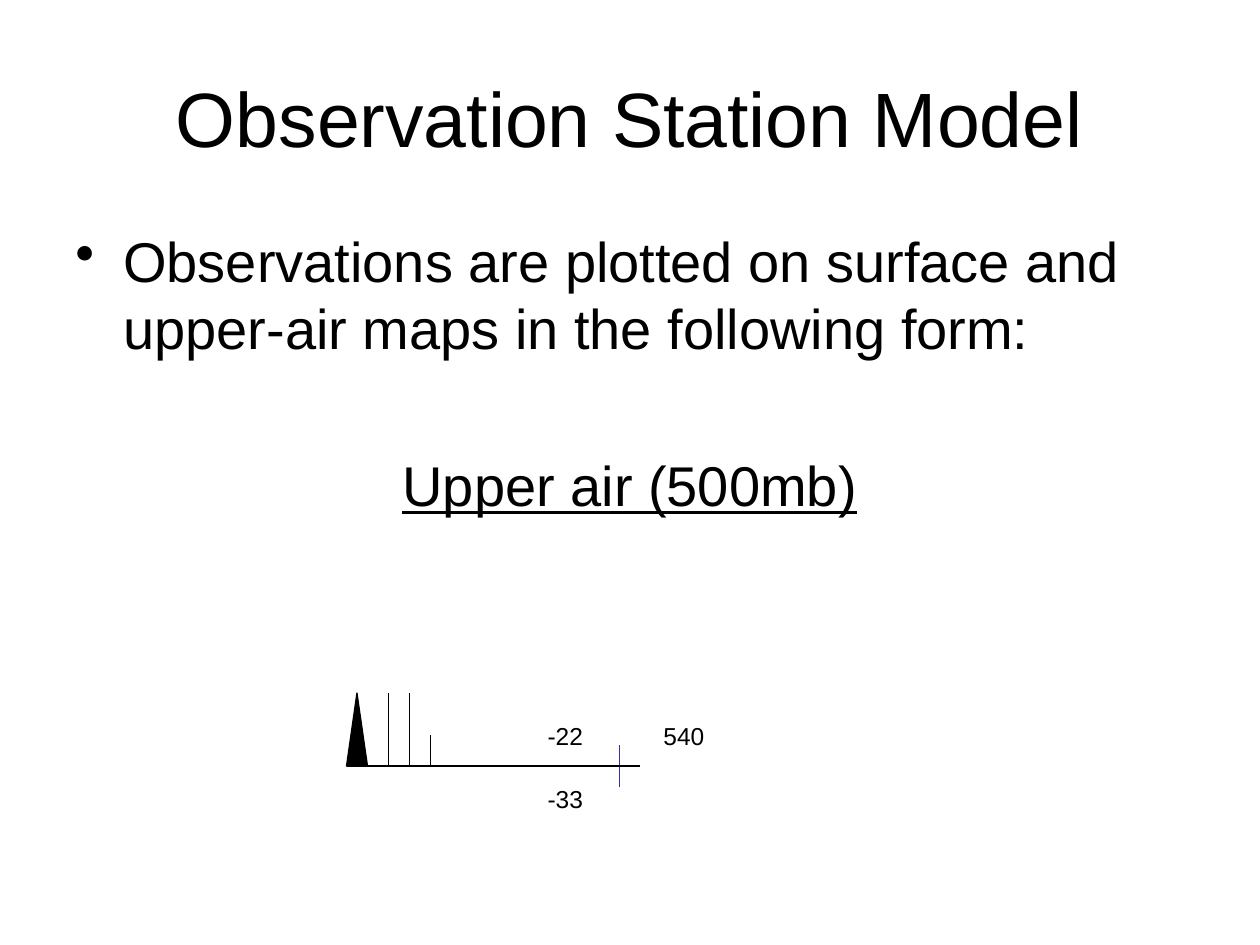
import pptx
import pptx.dml.color
import pptx.enum.shapes
import pptx.enum.text
import pptx.oxml
import pptx.util
from pptx.util import Inches

ALIGN = pptx.enum.text.PP_ALIGN
ANCHOR = pptx.enum.text.MSO_ANCHOR
SHAPES = pptx.enum.shapes
BLACK = "000000"
INDIGO = "333399"


def colour(value):
    """Turn a hex string into a colour."""
    return pptx.dml.color.RGBColor.from_string(value)


def write(para, text, size, paragraph_format=None, **font_format):
    """Write one span in a paragraph and apply the given formats."""
    span = para.add_run()
    span.text = text
    span.font.color.rgb = colour(BLACK)
    font_format = {"name": "Arial", "size": pptx.util.Pt(size), **font_format}
    for target, formats in ((span.font, font_format), (para, paragraph_format or {})):
        for name, value in formats.items():
            setattr(target, name, value)


def add_text_box(page, left, top, width, height):
    """Add a wrapping text box and return its text frame."""
    box = page.shapes.add_textbox(Inches(left), Inches(top), Inches(width), Inches(height))
    box.text_frame.word_wrap = True
    return box.text_frame


def add_line(page, start, end, line_colour=BLACK):
    """Draw a thin straight line without a shadow."""
    ends = [Inches(value) for value in (*start, *end)]
    line = page.shapes.add_connector(SHAPES.MSO_CONNECTOR.STRAIGHT, *ends)
    line.line.color.rgb = colour(line_colour)
    line.line.width = pptx.util.Pt(0.75)
    properties = line._element.spPr
    properties.append(pptx.oxml.parse_xml(
        '<a:effectLst xmlns:a="http://schemas.openxmlformats.org/drawingml/2006/main"/>'))


def add_title(page, left, top, width, height):
    """Place and fill the title placeholder."""
    title = page.shapes.title
    place = {"left": left, "top": top, "width": width, "height": height}
    for name, value in place.items():
        setattr(title, name, Inches(value))
    title.text_frame.vertical_anchor = ANCHOR.MIDDLE
    write(title.text_frame.paragraphs[0], "Observation Station Model", 44,
          {"alignment": ALIGN.CENTER})


def add_body(page, left, top, width, height):
    """Add the bulleted sentence and the underlined heading."""
    frame = add_text_box(page, left, top, width, height)
    bullet = frame.paragraphs[0]
    write(bullet, "Observations are plotted on surface and upper-air maps in the following form:",
          32, {"space_before": pptx.util.Pt(6.4)})
    properties = bullet._p.get_or_add_pPr()
    properties.set("marL", str(Inches(0.38)))
    properties.set("indent", str(-Inches(0.38)))
    properties.append(pptx.oxml.parse_xml(
        '<a:buChar xmlns:a="http://schemas.openxmlformats.org/drawingml/2006/main" char="•"/>'))
    write(frame.add_paragraph(), "Upper air (500mb)", 32,
          {"alignment": ALIGN.CENTER, "space_before": pptx.util.Pt(51)}, underline=True)


def add_station_model(page, left, top, width, height):
    """Draw the wind barb, the station cross and its readings."""
    base = top + height
    step = 1 / 6
    station = left + 13 * step
    add_line(page, (station - step, base), (left, base))
    for column, length in ((2, height), (3, height), (4, 0.25)):
        barb = left + column * step
        add_line(page, (barb, base), (barb, base - length))

    pennant = page.shapes.add_shape(
        SHAPES.MSO_SHAPE.ISOSCELES_TRIANGLE,
        Inches(left), Inches(top), Inches(step), Inches(height))
    pennant.shadow.inherit = False
    pennant.fill.solid()
    pennant.fill.fore_color.rgb = colour(BLACK)
    pennant.line.color.rgb = colour(BLACK)
    pennant.line.width = pptx.util.Pt(0.75)

    add_line(page, (station, base - step), (station, base + step), INDIGO)
    add_line(page, (station - step, base), (left + width, base))

    readings = (("540", 0.25, -0.41), ("-33", -0.67, 0.09), ("-22", -0.67, -0.41))
    for text, across, down in readings:
        frame = add_text_box(page, station + across, base + down, 0.68, 0.33)
        write(frame.paragraphs[0], text, 14)


def main():
    """Build and save the deck."""
    deck = pptx.Presentation()
    deck.slide_width, deck.slide_height = Inches(10), Inches(7.5)
    page = deck.slides.add_slide(deck.slide_layouts[5])
    add_title(page, 0.5, 0.3, 9, 1.25)
    add_body(page, 0.5, 1.75, 9, 4.95)
    add_station_model(page, 2.75, 5.5, 2.33, 0.58)
    deck.save("out.pptx")


if __name__ == "__main__":
    main()
